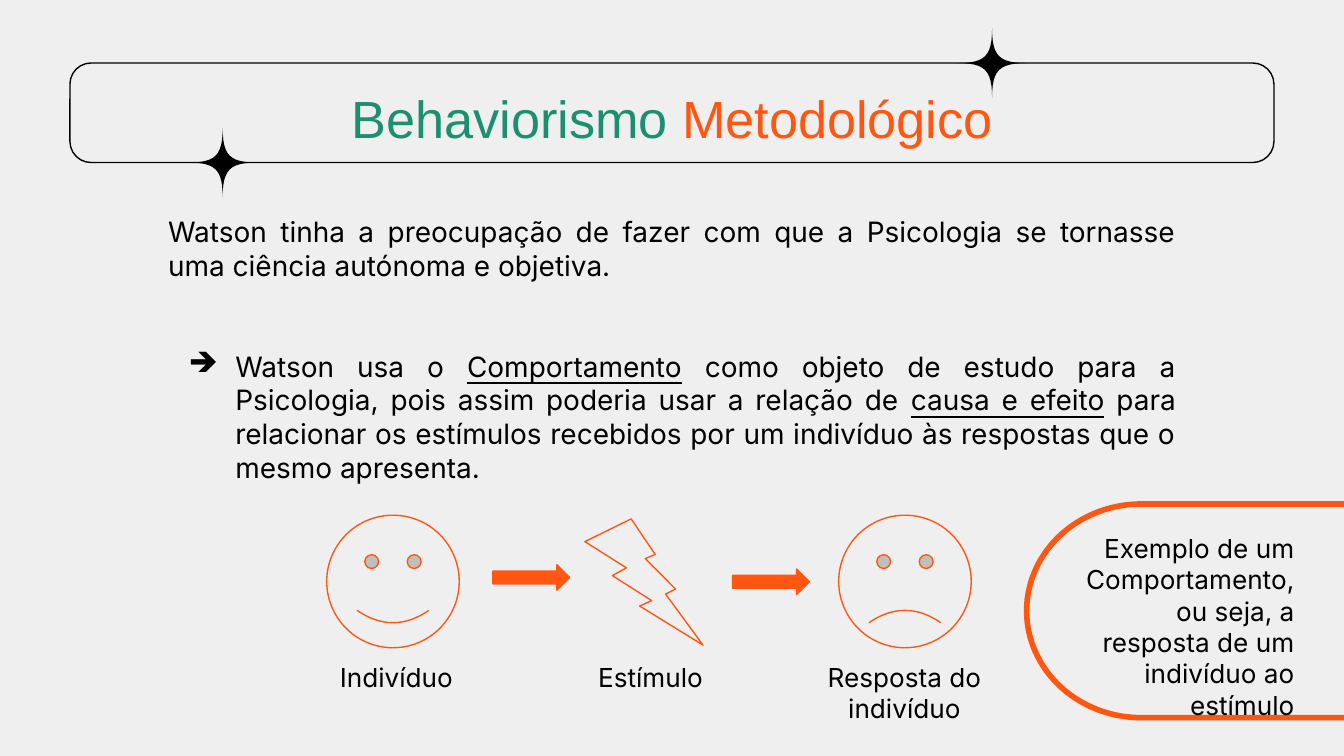
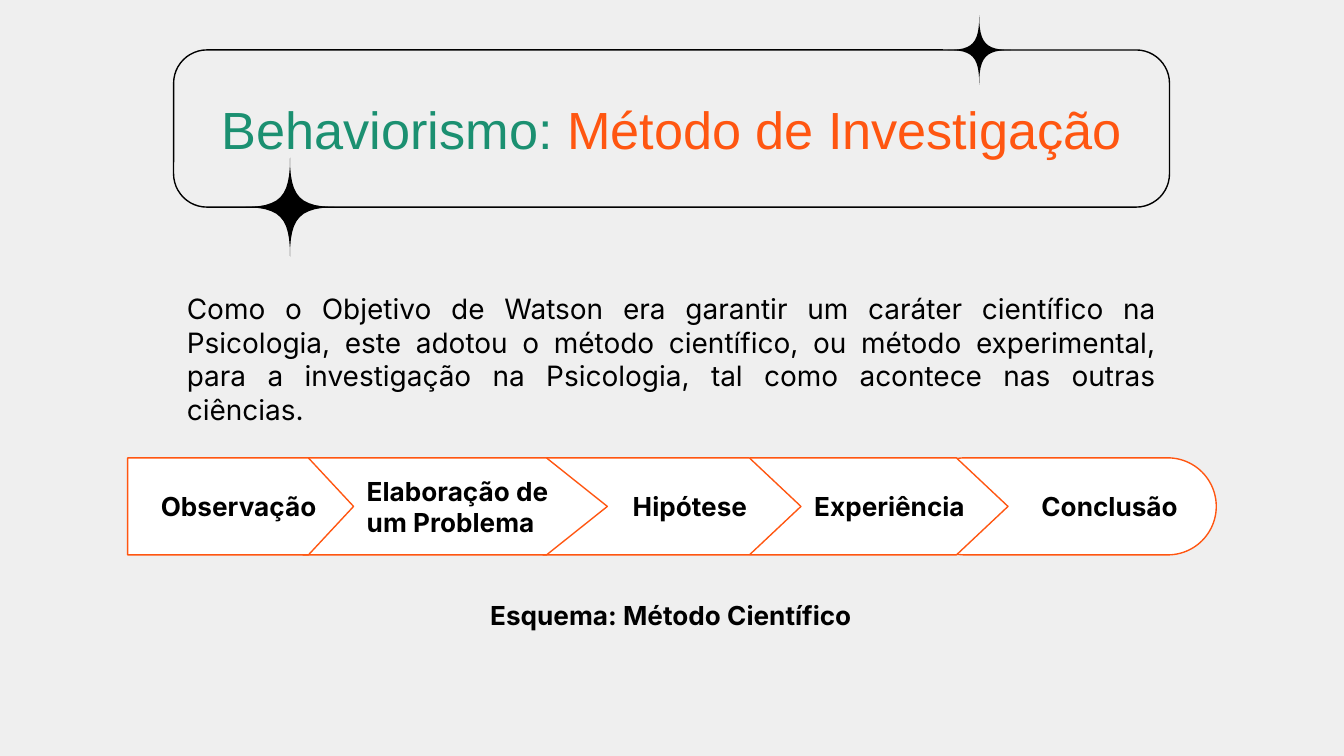
from dataclasses import dataclass

from lxml import etree
from pptx import Presentation
from pptx.dml.color import RGBColor
from pptx.enum.shapes import MSO_SHAPE
from pptx.enum.text import MSO_ANCHOR, MSO_AUTO_SIZE, PP_ALIGN
from pptx.oxml.ns import qn
from pptx.util import Pt

LEFT, CENTER, RIGHT, JUSTIFY = PP_ALIGN.LEFT, PP_ALIGN.CENTER, PP_ALIGN.RIGHT, PP_ALIGN.JUSTIFY
TOP, MIDDLE = MSO_ANCHOR.TOP, MSO_ANCHOR.MIDDLE
FIXED, GROW = MSO_AUTO_SIZE.NONE, MSO_AUTO_SIZE.SHAPE_TO_FIT_TEXT
ROUNDED, PILL = MSO_SHAPE.ROUNDED_RECTANGLE, MSO_SHAPE.FLOWCHART_TERMINATOR
SMILEY, BOLT = MSO_SHAPE.SMILEY_FACE, MSO_SHAPE.LIGHTNING_BOLT
ARROW, POINTED = MSO_SHAPE.RIGHT_ARROW, MSO_SHAPE.FLOWCHART_OFFPAGE_CONNECTOR
TITLE_ONLY = 5


@dataclass(frozen=True)
class Theme:
    paper: str = "EFEFEF"
    white: str = "FFFFFF"
    ink: str = "000000"
    green: str = "1B9071"
    orange: str = "FF5611"
    title_font: str = "Arial"
    body_font: str = "Inter"
    title_size: float = 28
    body_size: float = 15
    label_size: float = 14
    thin: float = 0.75
    thick: float = 3
    inset: float = 7.2
    title_width: float = 608
    label_height: float = 32
    corner: float = 0.212


THEME = Theme()


@dataclass(frozen=True)
class Box:
    left: float
    top: float
    width: float
    height: float

    def inner(self, left, top, width, height):
        """A box placed relative to this one."""
        return Box(self.left + left, self.top + top, width, height)

    def lengths(self):
        return [Pt(value) for value in (self.left, self.top, self.width, self.height)]


# Shared drawing helpers

def color(code):
    return RGBColor.from_string(code)


def paint(shape, fill=None, line=None, weight=THEME.thin):
    shape.shadow.inherit = False
    if fill:
        shape.fill.solid()
        shape.fill.fore_color.rgb = color(fill)
    else:
        shape.fill.background()
    if line:
        shape.line.color.rgb = color(line)
        shape.line.width = Pt(weight)
    else:
        shape.line.fill.background()
    return shape


def add_figure(page, kind, box, adjust=None, fill=THEME.paper, line=THEME.orange,
               weight=THEME.thin):
    shape = page.shapes.add_shape(kind, *box.lengths())
    if adjust is not None:
        shape.adjustments[0] = adjust
    return paint(shape, fill, line, weight)


def add_bullet(para, symbol):
    properties = para._p.get_or_add_pPr()
    properties.set("marL", str(Pt(36)))
    properties.set("indent", str(-Pt(25)))
    bullet_color = etree.SubElement(properties, qn("a:buClr"))
    etree.SubElement(bullet_color, qn("a:srgbClr"), val=THEME.ink)
    etree.SubElement(properties, qn("a:buChar"), char=symbol)


def write(para, text, size=THEME.label_size, font=THEME.body_font, ink=THEME.ink,
          bold=False, underline=False):
    span = para.add_run()
    span.text = text
    span.font.size = Pt(size)
    span.font.name = font
    span.font.color.rgb = color(ink)
    span.font.bold = bold
    span.font.underline = underline


def prepare_frame(frame, anchor=TOP, auto_size=GROW):
    frame.word_wrap = True
    frame.auto_size = auto_size
    frame.vertical_anchor = anchor
    frame.margin_left = frame.margin_right = Pt(THEME.inset)
    frame.margin_top = frame.margin_bottom = Pt(THEME.inset)
    return frame.paragraphs[0]


def add_text(page, box, text, align=LEFT, **style):
    frame = page.shapes.add_textbox(*box.lengths()).text_frame
    para = prepare_frame(frame)
    para.alignment = align
    write(para, text, **style)
    return frame


def add_star(page, center_x, center_y, width, height, steps=12, pinch=0.2):
    """Four-pointed star whose concave sides follow cubic curves."""
    side = []
    for step in range(steps):
        t = step / steps
        curve = 3 * t * (1 - t) * pinch
        side.append((-(curve * t + t ** 3), -(curve * (1 - t) + (1 - t) ** 3)))
    outline = []
    for _ in range(4):
        outline += side
        side = [(y, -x) for x, y in side]
    points = [((center_x + x * width / 2) * 100, (center_y + y * height / 2) * 100)
              for x, y in outline]
    builder = page.shapes.build_freeform(*points[0], scale=Pt(1) / 100)
    builder.add_line_segments(points[1:], close=True)
    paint(builder.convert_to_shape(), fill=THEME.ink)


# Title band: outlined frame, two-colour title, a star on each long edge

def title_band(page, box, words, title_height, top_star, bottom_star, spacing=None):
    title = page.shapes.title
    title_box = box.inner((box.width - THEME.title_width) / 2,
                          (box.height - title_height) / 2, THEME.title_width, title_height)
    title.left, title.top, title.width, title.height = title_box.lengths()
    para = prepare_frame(title.text_frame, MIDDLE, FIXED)
    para.alignment = CENTER
    para.line_spacing = spacing
    for text, ink in zip(words, (THEME.green, THEME.orange)):
        write(para, text, size=THEME.title_size, font=THEME.title_font, ink=ink)

    add_figure(page, ROUNDED, box, THEME.corner, fill=None, line=THEME.ink)
    for (offset, width, height), edge in ((top_star, 0), (bottom_star, box.height)):
        add_star(page, box.left + offset, box.top + edge, width, height)


# Slide 1 regions

def watson_text(page, box):
    frame = add_text(page, box, "Watson tinha a preocupação de fazer com que a Psicologia se "
                     "tornasse uma ciência autónoma e objetiva.", JUSTIFY, size=THEME.body_size)
    para = frame.add_paragraph()
    para.alignment = JUSTIFY
    para.space_before = Pt(36)
    add_bullet(para, "➔")
    for text, underline in (
        ("Watson usa o ", False),
        ("Comportamento", True),
        (" como objeto de estudo para a Psicologia, pois assim poderia usar a relação de ", False),
        ("causa e efeito", True),
        (" para relacionar os estímulos recebidos por um indivíduo às respostas que o mesmo "
         "apresenta.", False),
    ):
        write(para, text, size=THEME.body_size, underline=underline)


def stimulus_diagram(page, box):
    face, smile = 71, 0.047
    add_figure(page, SMILEY, box.inner(0, 0, face, face), smile)
    add_figure(page, BOLT, box.inner(138.3, 2, 63.3, 67.6))
    add_figure(page, SMILEY, box.inner(274.3, 0, face, face), -smile)
    for left, top in ((89, 26.5), (217.4, 28.8)):
        add_figure(page, ARROW, box.inner(left, top, 41.2, 13.7), fill=THEME.orange)
    for text, left, width, height, align in (
        ("Indivíduo", 0, 79, THEME.label_height, LEFT),
        ("Estímulo", 138.3, 79, THEME.label_height, LEFT),
        ("Resposta do indivíduo", 249.8, 119.5, 48, CENTER),
    ):
        add_text(page, box.inner(left, face, width, height), text, align)


def example_callout(page, box):
    add_figure(page, PILL, box, weight=THEME.thick)
    add_text(page, box.inner(11.6, 8, 139, 99.4), "Exemplo de um Comportamento, ou seja, a "
             "resposta de um indivíduo ao estímulo", RIGHT)


# Slide 2 region: overlapping steps, drawn from last to first

def method_chain(page, box):
    steps = (  # text, shape left, length, text left, text width, text height
        ("Observação", 0, 121, 10.7, 102.2, THEME.label_height),
        ("Elaboração de um Problema", 94, 163, 121, 113, 48),
        ("Hipótese", 222.5, 138.2, 263.5, 76.3, THEME.label_height),
        ("Experiência", 333.4, 138.2, 360.7, 98.6, THEME.label_height),
    )
    end = ("Conclusão", 422.6, 160.6, 482.4, 90.7, THEME.label_height)
    add_figure(page, ROUNDED, box.inner(end[1], 0, end[2], box.height), 0.5, fill=THEME.white)
    for _, left, length, *_ in reversed(steps):
        turn = (length - box.height) / 2
        arrow = add_figure(page, POINTED, box.inner(left + turn, -turn, box.height, length),
                           fill=THEME.white)
        arrow.rotation = 270
    for text, _, _, left, width, height in (*steps, end):
        add_text(page, box.inner(left, (box.height - height) / 2, width, height), text, bold=True)


# Slides

def add_page(deck):
    return deck.slides.add_slide(deck.slide_layouts[TITLE_ONLY])


def methodological_slide(deck):
    page = add_page(deck)
    example_callout(page, Box(550, 270, 382, 114.5))
    title_band(page, Box(37.5, 33.8, 645, 53.3), ("Behaviorismo ", "Metodológico"), 36,
               top_star=(494, 37.4, 37.4), bottom_star=(81.8, 37.4, 37.4), spacing=1.15)
    watson_text(page, Box(83, 108, 554, 160))
    stimulus_diagram(page, Box(175, 276, 369, 119))


def investigation_slide(deck):
    page = add_page(deck)
    title_band(page, Box(93, 26.8, 533.5, 84.2),
               ("Behaviorismo: ", "Método de Investigação"), 75.6,
               top_star=(431.6, 34, 37.4), bottom_star=(62.4, 52, 53))
    add_text(page, Box(93, 149, 533.5, 69), "Como o Objetivo de Watson era garantir um caráter "
             "científico na Psicologia, este adotou o método científico, ou método experimental, "
             "para a investigação na Psicologia, tal como acontece nas outras ciências.",
             JUSTIFY, size=THEME.body_size)
    method_chain(page, Box(68.4, 245.3, 583.2, 52))
    add_text(page, Box(255.5, 314, 209, THEME.label_height), "Esquema: Método Científico",
             bold=True)


def main():
    deck = Presentation()
    deck.slide_width, deck.slide_height = Pt(720), Pt(405)
    background = deck.slide_master.background.fill
    background.solid()
    background.fore_color.rgb = color(THEME.paper)
    methodological_slide(deck)
    investigation_slide(deck)
    deck.save("out.pptx")


if __name__ == "__main__":
    main()
